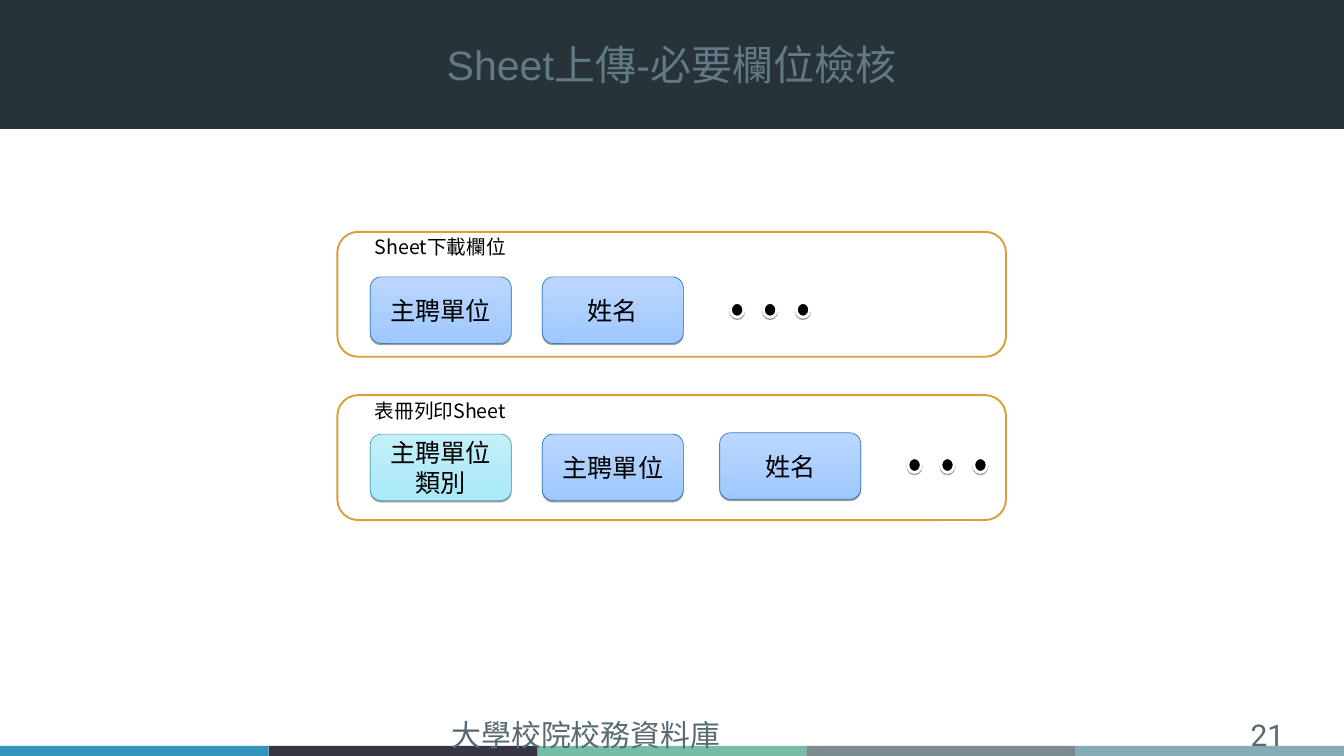
from lxml import etree
from pptx import Presentation
from pptx.dml.color import RGBColor
from pptx.enum.shapes import MSO_SHAPE
from pptx.enum.text import MSO_ANCHOR, PP_ALIGN
from pptx.oxml.ns import qn
from pptx.util import Inches, Pt

RECT, ROUNDED, OVAL = MSO_SHAPE.RECTANGLE, MSO_SHAPE.ROUNDED_RECTANGLE, MSO_SHAPE.OVAL
LEFT, CENTER, RIGHT = PP_ALIGN.LEFT, PP_ALIGN.CENTER, PP_ALIGN.RIGHT
TOP, MIDDLE = MSO_ANCHOR.TOP, MSO_ANCHOR.MIDDLE

WHITE = RGBColor(0xFF, 0xFF, 0xFF)
BLACK = RGBColor(0, 0, 0)
HEADER = RGBColor(0x27, 0x33, 0x39)
TITLE = RGBColor(0x61, 0x7A, 0x86)
FOOTER = RGBColor(0x57, 0x69, 0x73)
GOLD = RGBColor(0xD8, 0x9F, 0x39)
STRIPES = [
    RGBColor(0x34, 0x94, 0xBA),
    RGBColor(0x37, 0x35, 0x45),
    RGBColor(0x75, 0xBD, 0xA7),
    RGBColor(0x7A, 0x8C, 0x8E),
    RGBColor(0x84, 0xAC, 0xB6),
]
BLUE = (RGBColor(0x9E, 0xC8, 0xFF), RGBColor(0xBC, 0xD7, 0xFF), RGBColor(0x35, 0x7E, 0xB9))
CYAN = (RGBColor(0xA9, 0xE9, 0xF9), RGBColor(0xC3, 0xEF, 0xF9), RGBColor(0x53, 0xA5, 0xB3))

SANS = "Noto Sans CJK SC"
WIDTH, HEIGHT = 20, 11.25
PANEL_LEFT, PANEL_W, PANEL_H = 5.02, 9.95, 1.86
COLUMNS = [5.51, 8.07, 10.71]
FIELD_W, FIELD_H = 2.1, 0.99
DOT_W, DOT_H, DOT_STEP, DOT_COUNT = 0.2, 0.22, 0.49, 3

TITLE_TEXT = "Sheet上傳-必要欄位檢核"
FOOTER_TEXT = "大學校院校務資料庫"
PAGE_NUMBER = "21"
PANELS = [
    {
        "top": 5.88, "caption": "表冊列印Sheet", "caption_top": 5.9,
        "fields": [("主聘單位\n類別", CYAN, 6.46), ("主聘單位", BLUE, 6.46), ("姓名", BLUE, 6.44)],
        "dots": (13.51, 6.81),
    },
    {
        "top": 3.45, "caption": "Sheet下載欄位", "caption_top": 3.45,
        "fields": [("主聘單位", BLUE, 4.12), ("姓名", BLUE, 4.12)],
        "dots": (10.87, 4.5),
    },
]

prs = Presentation()
prs.slide_width, prs.slide_height = Inches(WIDTH), Inches(HEIGHT)
slide = prs.slides.add_slide(prs.slide_layouts[6])


def add_box(kind, left, top, width, height, fill=None, line=None, line_width=1):
    box = slide.shapes.add_shape(kind, Inches(left), Inches(top), Inches(width), Inches(height))
    box.shadow.inherit = False
    if fill is not None:
        box.fill.solid()
        box.fill.fore_color.rgb = fill
    if line is None:
        box.line.fill.background()
    else:
        box.line.color.rgb = line
        box.line.width = Pt(line_width)
    return box


def add_drop_shadow(box):
    effects = box._element.spPr.find(qn("a:effectLst"))
    shadow = etree.SubElement(effects, qn("a:outerShdw"), blurRad="0", dist=str(Pt(1.6)),
                              dir="5400000", rotWithShape="0")
    color = etree.SubElement(shadow, qn("a:srgbClr"), val="000000")
    etree.SubElement(color, qn("a:alpha"), val="38000")


def write(box, text, size, font, color, align=LEFT, anchor=TOP, insets=(0.1, 0.05)):
    frame = box.text_frame
    frame.word_wrap = True
    frame.vertical_anchor = anchor
    frame.margin_left = frame.margin_right = Inches(insets[0])
    frame.margin_top = frame.margin_bottom = Inches(insets[1])
    frame.text = text
    for paragraph in frame.paragraphs:
        paragraph.alignment = align
        for run in paragraph.runs:
            run.font.size = Pt(size)
            run.font.name = font
            run.font.color.rgb = color


def add_label(left, top, width, height, *style, **layout):
    label = slide.shapes.add_textbox(Inches(left), Inches(top), Inches(width), Inches(height))
    write(label, *style, **layout)


def add_field(left, top, text, palette):
    dark, light, edge = palette
    field = add_box(ROUNDED, left, top, FIELD_W, FIELD_H, line=edge, line_width=0.75)
    field.fill.gradient()
    field.fill.gradient_angle = 90
    for stop, color, position in zip(field.fill.gradient_stops, (dark, light), (0, 1)):
        stop.color.rgb = color
        stop.position = position
    add_drop_shadow(field)
    write(field, text, 27, SANS, BLACK, CENTER, MIDDLE, (0.07, 0.04))


add_box(RECT, 0, -0.02, WIDTH, 1.94, HEADER)
stripe_w = WIDTH / len(STRIPES)
for i, color in enumerate(STRIPES):
    add_box(RECT, i * stripe_w, HEIGHT - 0.15, stripe_w, 0.15, color)

add_label(1.37, 0.4, 17.25, 1.1, TITLE_TEXT, 44, "Arial", TITLE, CENTER, MIDDLE, (0.18, 0.09))
add_label(6.62, 10.61, 6.75, 0.46, FOOTER_TEXT, 32, "Roboto", FOOTER)
add_label(14.71, 10.61, 4.5, 0.46, PAGE_NUMBER, 32, "Roboto", FOOTER, RIGHT)

for panel in PANELS:
    add_box(ROUNDED, PANEL_LEFT, panel["top"], PANEL_W, PANEL_H, WHITE, GOLD, 2)
    for left, (text, palette, top) in zip(COLUMNS, panel["fields"]):
        add_field(left, top, text, palette)
    dots_left, dots_top = panel["dots"]
    for i in range(DOT_COUNT):
        dot = add_box(OVAL, dots_left + i * DOT_STEP, dots_top, DOT_W, DOT_H, BLACK, WHITE, 3)
        add_drop_shadow(dot)
    add_label(COLUMNS[0], panel["caption_top"], 2.73, 0.43, panel["caption"], 21, SANS, BLACK,
              insets=(0.07, 0.04))

prs.save("out.pptx")
